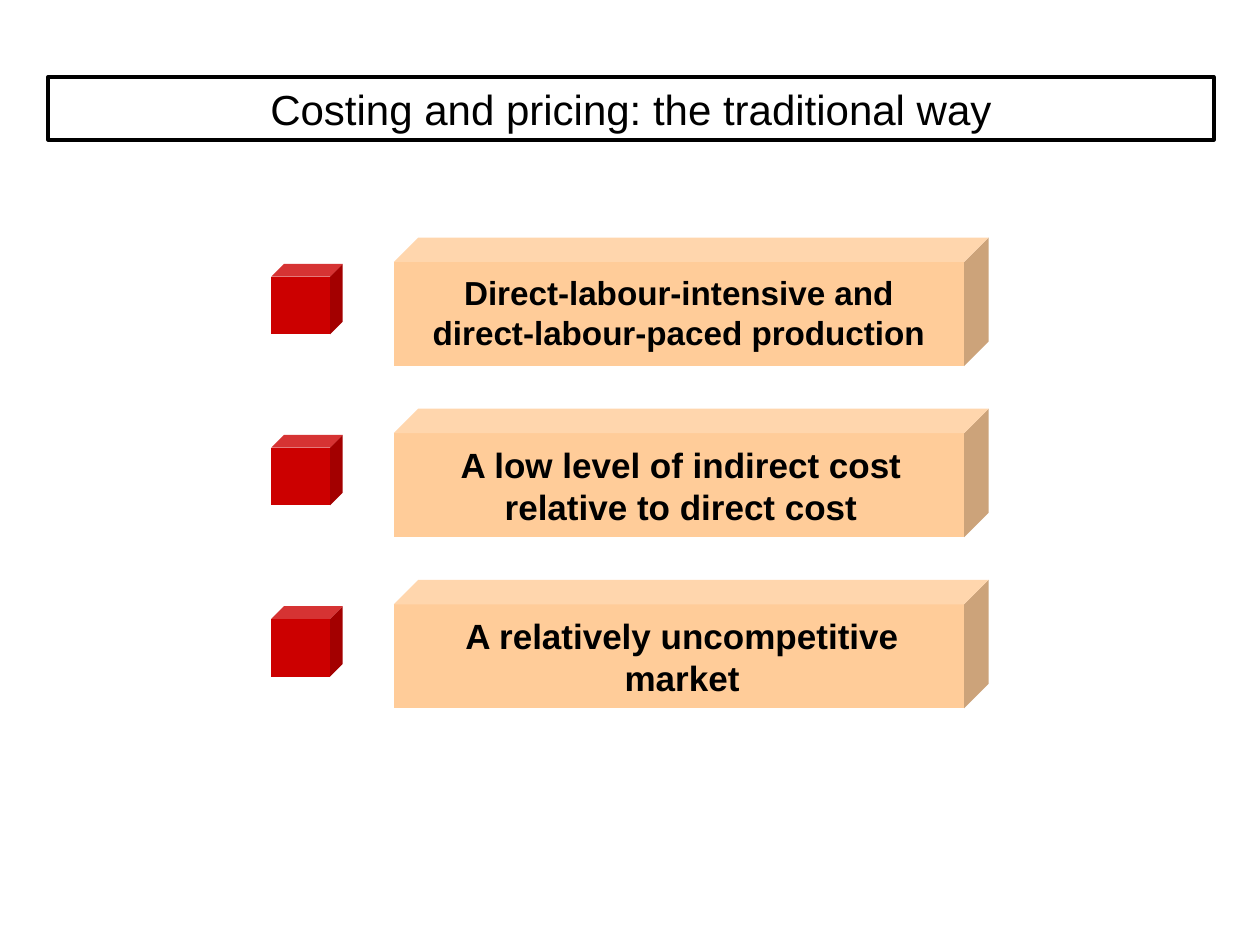
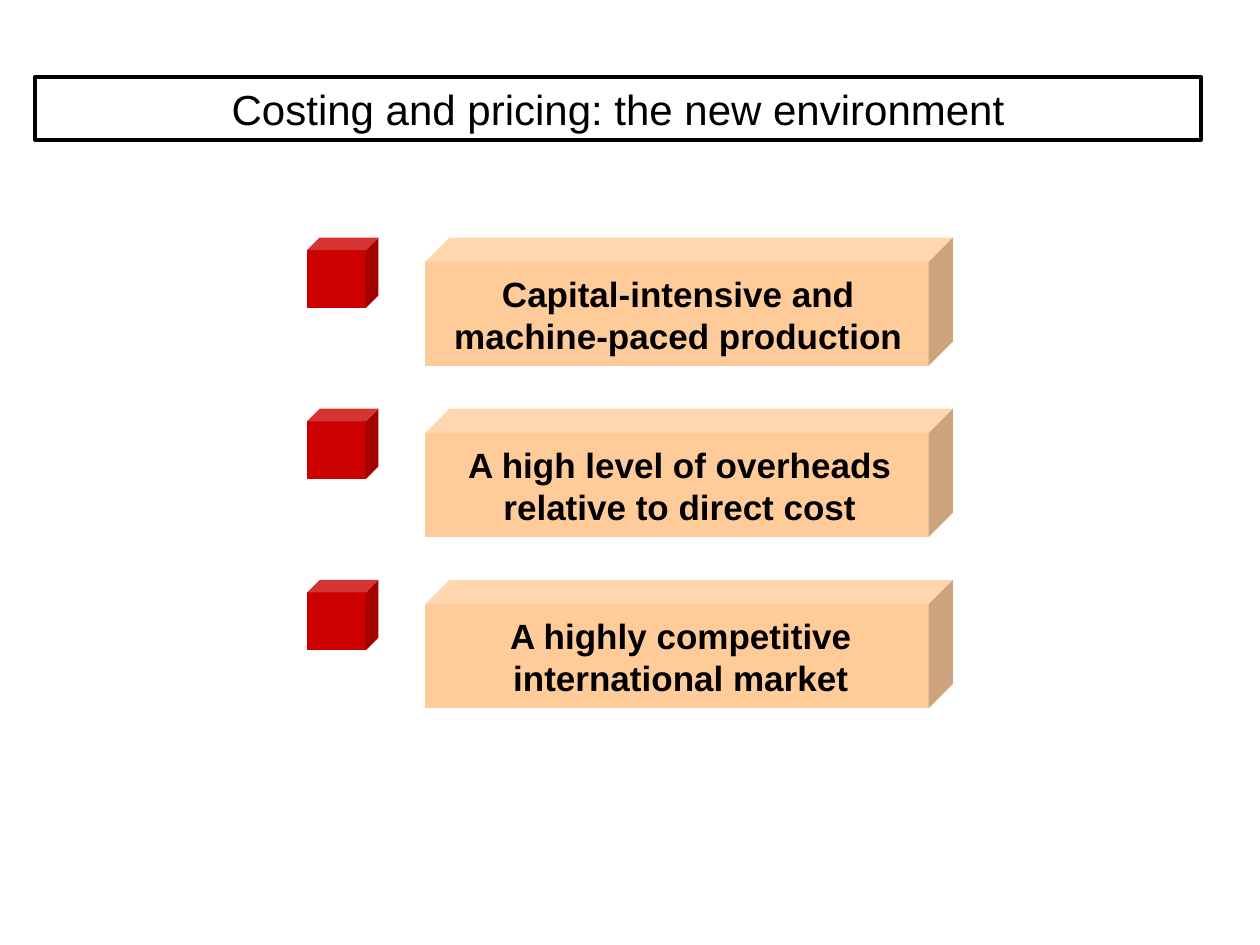
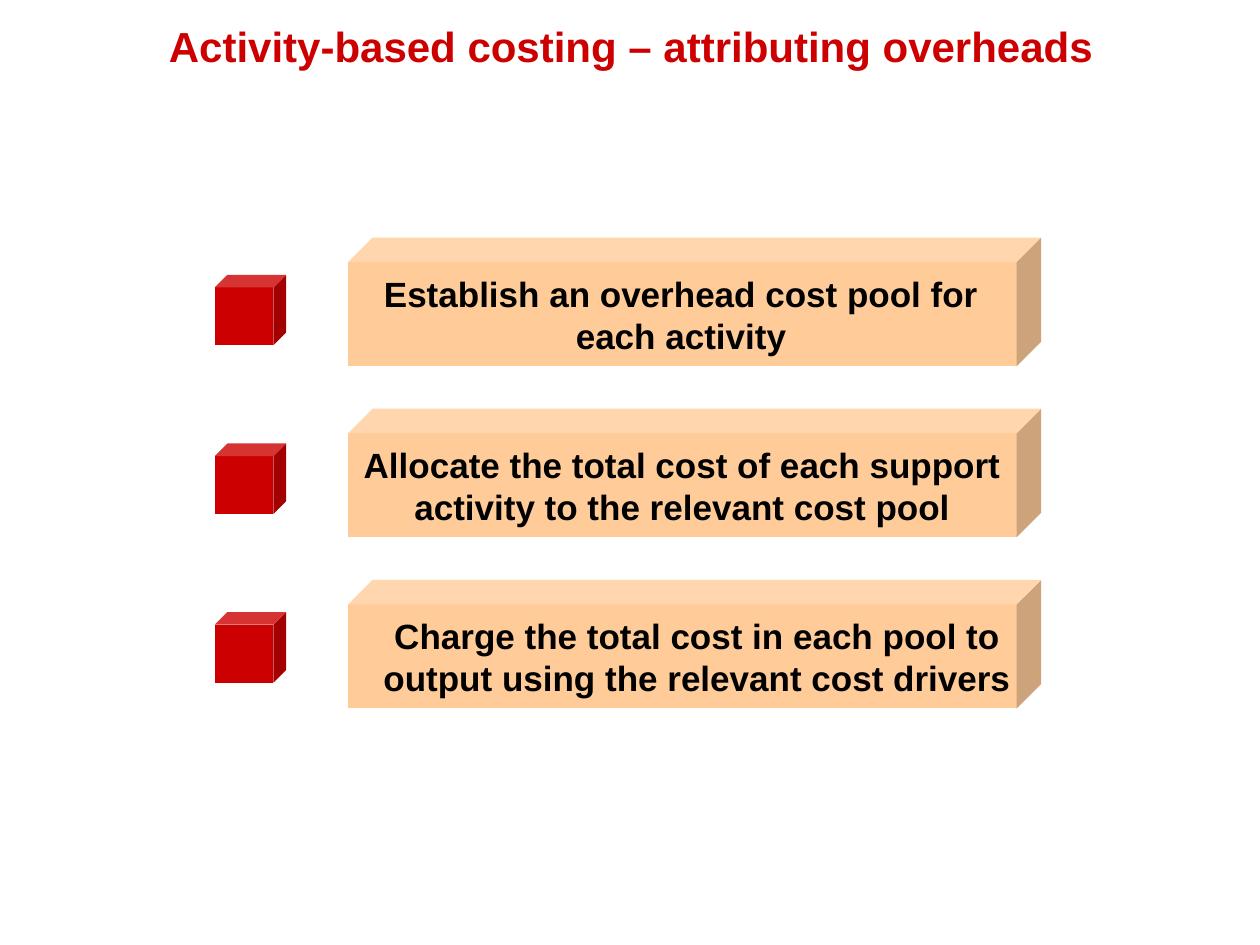
from dataclasses import dataclass

from pptx import Presentation
from pptx.dml.color import RGBColor
from pptx.enum.shapes import MSO_SHAPE
from pptx.enum.text import MSO_ANCHOR, MSO_AUTO_SIZE, PP_ALIGN
from pptx.util import Cm, Pt

CUBE, RECTANGLE = MSO_SHAPE.CUBE, MSO_SHAPE.RECTANGLE
CENTER, TOP = PP_ALIGN.CENTER, MSO_ANCHOR.TOP
FIT_SHAPE = MSO_AUTO_SIZE.SHAPE_TO_FIT_TEXT

BLACK = RGBColor(0x00, 0x00, 0x00)
WHITE = RGBColor(0xFF, 0xFF, 0xFF)
RED = RGBColor(0xCC, 0x00, 0x00)
PEACH = RGBColor(0xFF, 0xCC, 0x99)

FRAME_FORMAT = {"word_wrap": True, "auto_size": FIT_SHAPE, "vertical_anchor": TOP}
TITLE_FORMAT = {"name": "Arial", "size": Pt(24), "bold": False}
RED_TITLE_FORMAT = {"name": "Arial", "size": Pt(24), "bold": True}
LABEL_FORMAT = {"name": "Arial", "size": Pt(20), "bold": True}

TITLE_WIDTH, TITLE_HEIGHT = Cm(23.5), Cm(1.27)
BAR_TOP, BAR_HEIGHT, BAR_PITCH, BAR_DEPTH = Cm(4.79), Cm(2.59), Cm(3.45), 0.19
MARKER_WIDTH, MARKER_HEIGHT, MARKER_DEPTH = Cm(1.44), Cm(1.42), 0.18
LABEL_DROP, LABEL_HEIGHT = Cm(0.57), Cm(1.96)


@dataclass
class Label:
    text: str
    indent: float  # cm from the left edge of the bar
    width: float  # cm
    size: int = 20


@dataclass
class BarList:
    """Three labelled bars with a marker cube beside each; lengths in cm."""
    left: float
    width: float
    marker_left: float
    marker_drop: float
    labels: list
    marker_pitch: float = 3.45


TRADITIONAL = BarList(7.94, 11.99, 5.47, 0.53, [
    Label("Direct-labour-intensive and direct-labour-paced production", 0.26, 10.97, 19),
    Label("A low level of indirect cost relative to direct cost", 0.14, 11.3),
    Label("A relatively uncompetitive market", 0.59, 10.44),
])
NEW_ENVIRONMENT = BarList(8.57, 10.64, 6.19, 0, [
    Label("Capital-intensive and machine-paced production", 0.24, 9.73),
    Label("A high level of overheads relative to direct cost", 0.12, 10.03),
    Label("A highly competitive international market", 0.52, 9.27),
])
ACTIVITY_BASED = BarList(7.02, 13.97, 4.33, 0.75, [
    Label("Establish an overhead cost pool for each activity", 0.32, 12.78),
    Label("Allocate the total cost of each support activity to the relevant cost pool",
          -0.49, 14.45),
    Label("Charge the total cost in each pool to output using the relevant cost drivers",
          0, 14.07),
], marker_pitch=3.4)


def set_all(target, values):
    for name, value in values.items():
        setattr(target, name, value)


def write_text(box, text, text_format, color=BLACK):
    frame = box.text_frame
    set_all(frame, FRAME_FORMAT)
    para = frame.paragraphs[0]
    para.alignment = CENTER
    span = para.add_run()
    span.text = text
    set_all(span.font, text_format)
    span.font.color.rgb = color


def add_filled(page, kind, left, top, width, height, fill):
    shape = page.shapes.add_shape(kind, left, top, width, height)
    shape.shadow.inherit = False
    shape.fill.solid()
    shape.fill.fore_color.rgb = fill
    shape.line.fill.background()
    return shape


def add_cube(page, left, top, width, height, fill, depth):
    cube = add_filled(page, CUBE, left, top, width, height, fill)
    cube.adjustments[0] = depth


def add_framed_title(page, text, left):
    box = add_filled(page, RECTANGLE, left, Cm(1.55), TITLE_WIDTH, TITLE_HEIGHT, WHITE)
    box.line.color.rgb = BLACK
    box.line.width = Pt(2)
    write_text(box, text, TITLE_FORMAT)


def add_red_title(page, text, left):
    box = page.shapes.add_textbox(left, Cm(0.28), TITLE_WIDTH, TITLE_HEIGHT)
    write_text(box, text, RED_TITLE_FORMAT, RED)


def add_bar_list(page, bars):
    left, width = Cm(bars.left), Cm(bars.width)
    for row, label in enumerate(bars.labels):
        top = BAR_TOP + row * BAR_PITCH
        marker_top = BAR_TOP + Cm(bars.marker_drop) + row * Cm(bars.marker_pitch)
        add_cube(page, Cm(bars.marker_left), marker_top,
                 MARKER_WIDTH, MARKER_HEIGHT, RED, MARKER_DEPTH)
        add_cube(page, left, top, width, BAR_HEIGHT, PEACH, BAR_DEPTH)
        box = page.shapes.add_textbox(left + Cm(label.indent), top + LABEL_DROP,
                                      Cm(label.width), LABEL_HEIGHT)
        write_text(box, label.text, LABEL_FORMAT | {"size": Pt(label.size)})


def main():
    deck = Presentation()
    deck.slide_width, deck.slide_height = Cm(25.4), Cm(19.05)
    blank = deck.slide_layouts[6]
    slides = [
        (add_framed_title, "Costing and pricing: the traditional way", 0.97, TRADITIONAL),
        (add_framed_title, "Costing and pricing: the new environment", 0.71, NEW_ENVIRONMENT),
        (add_red_title, "Activity-based costing – attributing overheads", 0.97, ACTIVITY_BASED),
    ]
    for add_title, title, title_left, bars in slides:
        page = deck.slides.add_slide(blank)
        add_title(page, title, Cm(title_left))
        add_bar_list(page, bars)
    deck.save("out.pptx")


if __name__ == "__main__":
    main()
